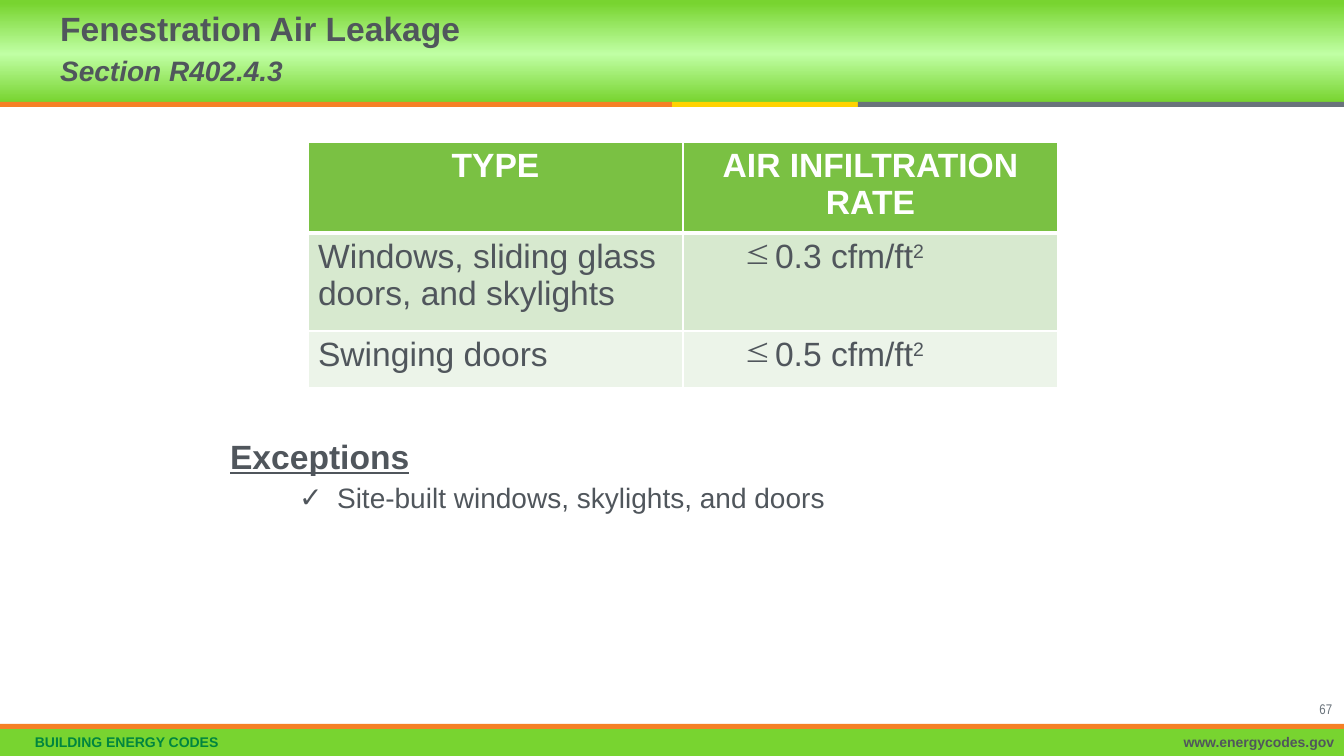
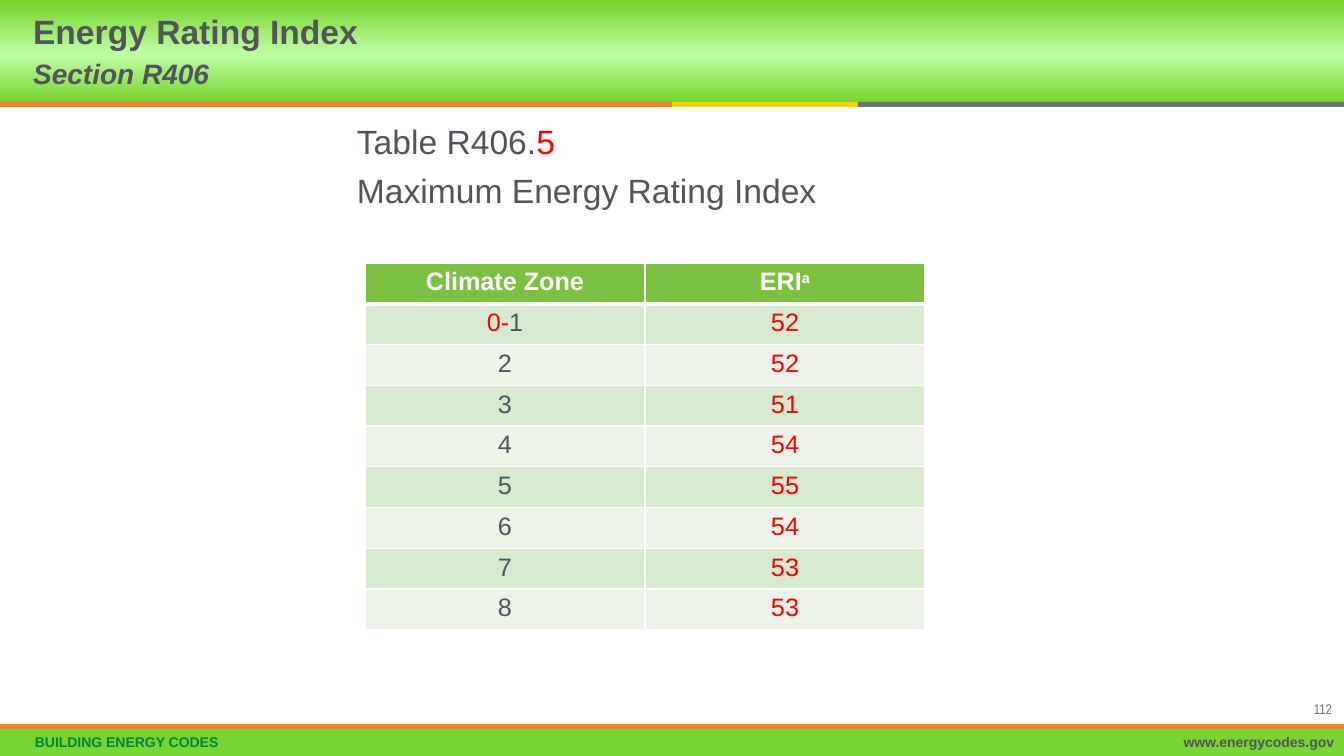
import copy

import lxml.etree
import pptx
import pptx.dml.color
import pptx.enum.shapes
import pptx.enum.text
import pptx.oxml.ns
import pptx.util

PX = 9071  # EMU in one pixel
WIDTH, HEIGHT = 1344, 756

TEXT, WHITE, RED = "50565C", "FFFFFF", "FF0000"
GREEN, PALE_GREEN, DARK_GREEN = "78D430", "C0FFA4", "00853F"
ORANGE, YELLOW, GRAY = "F58025", "FFD200", "6A737B"
TABLE_HEADER, TABLE_BANDS = "7AC143", ("D7E9CF", "ECF4E9")

ALIGN = pptx.enum.text.PP_ALIGN
qn = pptx.oxml.ns.qn


def rgb(color):
    return pptx.dml.color.RGBColor.from_string(color)


def add_text(paragraph, text, size=24, color=TEXT, font="Arial", bold=False,
             italic=False, underline=False, superscript=False, align=None,
             bullet=None, indent=None, line_spacing=None, space_before=None):
    """Add a run; indent is (margin, first line) in pixels."""
    if indent:
        properties = paragraph._p.get_or_add_pPr()
        properties.set("marL", str(indent[0] * PX))
        properties.set("indent", str(indent[1] * PX))
        if bullet:
            lxml.etree.SubElement(properties, qn("a:buChar")).set("char", bullet)
        else:
            lxml.etree.SubElement(properties, qn("a:buNone"))
    if align is not None:
        paragraph.alignment = align
    if line_spacing is not None:
        paragraph.line_spacing = line_spacing
    if space_before is not None:
        paragraph.space_before = pptx.util.Pt(space_before)
    run = paragraph.add_run()
    run.text = text
    run.font.name = font
    run.font.size = pptx.util.Pt(size)
    run.font.bold = bold
    run.font.italic = italic
    run.font.underline = underline
    run.font.color.rgb = rgb(color)
    if superscript:
        run.font._element.set("baseline", "30000")


presentation = pptx.Presentation()
presentation.slide_width = WIDTH * PX
presentation.slide_height = HEIGHT * PX
leakage_slide = presentation.slides.add_slide(presentation.slide_layouts[1])
rating_slide = presentation.slides.add_slide(presentation.slide_layouts[5])

# Bands and footers, drawn once and then moved to the slide master
shared_shapes = []
for left, top, width, height, color in [
    (0, 0, WIDTH, 102, None),
    (0, 729, WIDTH, 27, GREEN),
    (0, 102, 672, 5, ORANGE),
    (672, 102, 186, 5, YELLOW),
    (858, 102, 486, 5, GRAY),
    (0, 724, WIDTH, 5, ORANGE),
]:
    band = leakage_slide.shapes.add_shape(
        pptx.enum.shapes.MSO_SHAPE.RECTANGLE,
        left * PX, top * PX, width * PX, height * PX)
    band.shadow.inherit = False
    band.line.fill.background()
    if color:
        band.fill.solid()
        band.fill.fore_color.rgb = rgb(color)
    else:
        band.fill.gradient()
        band.fill.gradient_angle = 90
        stop_list = band._element.spPr.find(qn("a:gradFill")).find(qn("a:gsLst"))
        stop_list.append(copy.deepcopy(stop_list[0]))
        stops = [(0, GREEN), (0.47, PALE_GREEN), (0.97, GREEN)]
        for stop, (position, stop_color) in zip(band.fill.gradient_stops, stops):
            stop.position = position
            stop.color.rgb = rgb(stop_color)
    shared_shapes.append(band)

for left, width, text, color, align in [
    (25, 600, "BUILDING ENERGY CODES", DARK_GREEN, ALIGN.LEFT),
    (805, 539, "www.energycodes.gov", TEXT, ALIGN.RIGHT),
]:
    footer = leakage_slide.shapes.add_textbox(left * PX, 730 * PX, width * PX, 26 * PX)
    footer.text_frame.word_wrap = True
    add_text(footer.text_frame.paragraphs[0], text, size=10, color=color,
             bold=True, align=align, line_spacing=0.9)
    shared_shapes.append(footer)

master_tree = presentation.slide_master.shapes._spTree
for number, shape in enumerate(shared_shapes):
    shape._element.nvSpPr.cNvPr.set("id", str(100 + number))
    master_tree.insert_element_before(shape._element, "p:extLst")

# Table contents: every cell is a list of (text, format) runs
heading = {"color": WHITE, "bold": True, "align": ALIGN.CENTER}
rate = {"bullet": "≤", "indent": (82, -31)}
squared = ("2", {"superscript": True})
leakage_rows = [
    [[("TYPE", heading)], [("AIR INFILTRATION RATE", heading)]],
    [[("Windows, sliding glass doors, and skylights", {})],
     [("0.3 cfm/ft", rate), squared]],
    [[("Swinging doors", {})], [("0.5 cfm/ft", rate), squared]],
]

small_heading = {**heading, "size": 18}
value = {"size": 18, "align": ALIGN.CENTER}
changed = {**value, "color": RED}
rating_rows = [
    [[("Climate Zone", small_heading)],
     [("ERI", small_heading), ("a", {**small_heading, "superscript": True})]],
    [[("0-", changed), ("1", value)], [("52", changed)]],
]
for zone, index in enumerate([52, 51, 54, 55, 54, 53, 53], start=2):
    rating_rows.append([[(str(zone), value)], [(str(index), changed)]])

# Titles, page numbers and tables
for slide, title_box, title, section, page, table_box, row_heights, rows in [
    (leakage_slide, (50, -3, 592, 102), "Fenestration Air Leakage",
     "Section R402.4.3", "67", (308, 142, 750, 246), (91, 98, 57), leakage_rows),
    (rating_slide, (23, 0, 836, 102), "Energy Rating Index",
     "Section R406", "112", (365, 263, 560, 367), None, rating_rows),
]:
    title_shape = slide.shapes.title
    title_shape.left, title_shape.top, title_shape.width, title_shape.height = (
        length * PX for length in title_box)
    frame = title_shape.text_frame
    frame.auto_size = pptx.enum.text.MSO_AUTO_SIZE.NONE
    frame.vertical_anchor = pptx.enum.text.MSO_ANCHOR.MIDDLE
    paragraph = frame.paragraphs[0]
    add_text(paragraph, title, bold=True, align=ALIGN.LEFT,
             line_spacing=pptx.util.Pt(28))
    paragraph.add_line_break()
    add_text(paragraph, section, size=20, bold=True, italic=True)

    page_box = slide.shapes.add_textbox(1247 * PX, 696 * PX, 95 * PX, 18 * PX)
    page_box.text_frame.word_wrap = True
    add_text(page_box.text_frame.paragraphs[0], page, size=10, color=GRAY,
             font="Arial Narrow", align=ALIGN.RIGHT)

    table = slide.shapes.add_table(
        len(rows), 2, *(length * PX for length in table_box)).table
    table.horz_banding = False
    for row, height in zip(table.rows, row_heights or ()):
        row.height = height * PX
    for row_number, row in enumerate(rows):
        for column_number, runs in enumerate(row):
            cell = table.cell(row_number, column_number)
            for text, text_format in runs:
                add_text(cell.text_frame.paragraphs[0], text, **text_format)
            cell_properties = cell._tc.get_or_add_tcPr()
            for side in ("lnL", "lnR", "lnT", "lnB"):
                thick = (row_number, side) in [(0, "lnB"), (1, "lnT")]
                border = lxml.etree.SubElement(cell_properties, qn("a:" + side))
                border.set("w", str(pptx.util.Pt(3 if thick else 1)))
                border_fill = lxml.etree.SubElement(border, qn("a:solidFill"))
                lxml.etree.SubElement(border_fill, qn("a:srgbClr")).set("val", WHITE)
            cell.fill.solid()
            cell.fill.fore_color.rgb = rgb(
                TABLE_BANDS[(row_number - 1) % 2] if row_number else TABLE_HEADER)

# Exceptions under the air leakage table
body = leakage_slide.placeholders[1]
body.left, body.top, body.width, body.height = (
    length * PX for length in (220, 435, 905, 266))
frame = body.text_frame
frame.auto_size = pptx.enum.text.MSO_AUTO_SIZE.NONE
add_text(frame.paragraphs[0], "Exceptions", bold=True, underline=True,
         indent=(0, 0), line_spacing=0.9, space_before=0)
exception = frame.add_paragraph()
exception.level = 1
add_text(exception, "Site-built windows, skylights, and doors", size=20,
         bullet="✓", indent=(107, -38), line_spacing=0.9, space_before=6)

# Caption above the energy rating table
caption = rating_slide.shapes.add_textbox(347 * PX, 116 * PX, 577 * PX, 116 * PX)
caption.text_frame.word_wrap = True
paragraph = caption.text_frame.paragraphs[0]
add_text(paragraph, "Table R406.")
add_text(paragraph, "5", color=RED)
add_text(caption.text_frame.add_paragraph(), "Maximum Energy Rating Index",
         space_before=6)

presentation.save("out.pptx")
